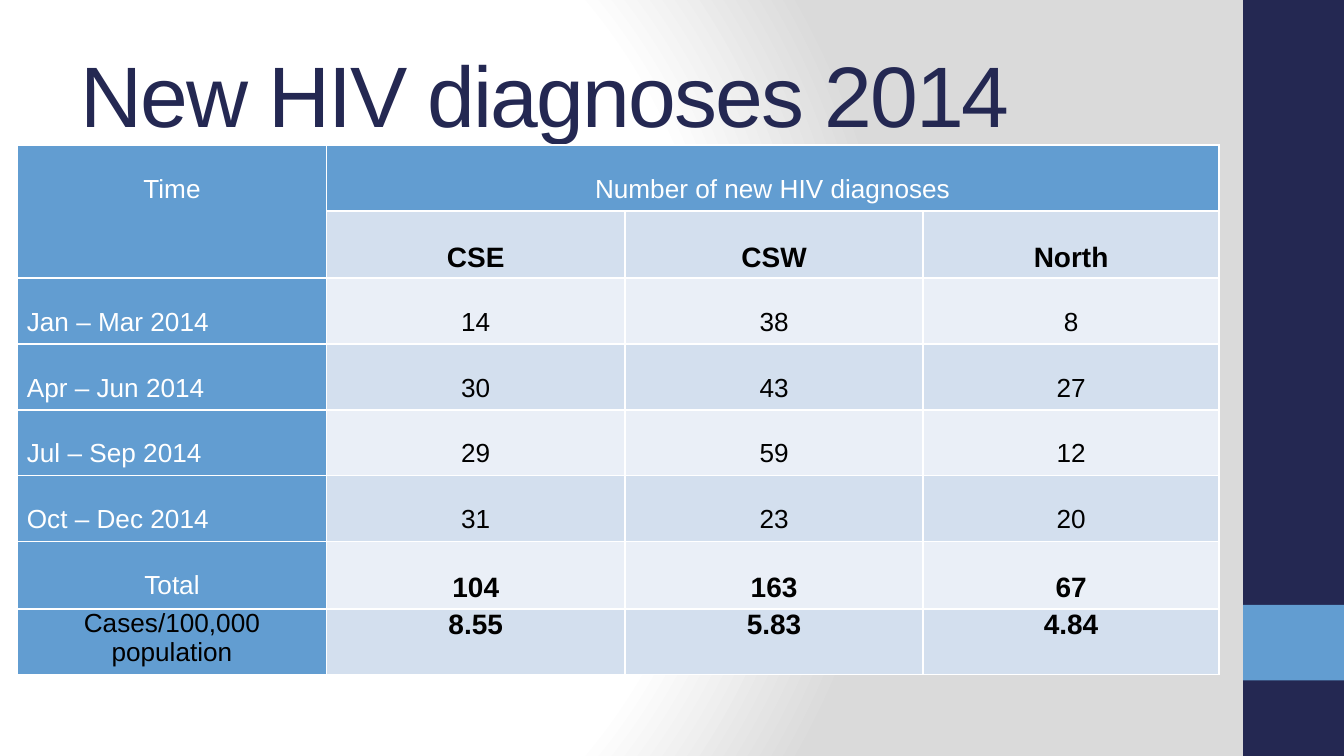
from pptx import Presentation
from pptx.dml.color import RGBColor
from pptx.enum.shapes import MSO_SHAPE as SHAPE
from pptx.enum.text import MSO_ANCHOR as ANCHOR, PP_ALIGN as ALIGN
from pptx.oxml import parse_xml
from pptx.oxml.ns import nsdecls, qn
from pptx.util import Inches, Pt

COLORS = {"navy": "242852", "blue": "629DD1", "white": "FFFFFF", "black": "000000",
          "grey": "DADADA", "dark_band": "D3DFEE", "light_band": "EAEFF7"}
W = 10
H = W * 9 / 16


def rgb(name):
    return RGBColor.from_string(COLORS[name])


def write(p, text, size, color, bold=False):
    r = p.add_run()
    r.text = text
    for key, value in {"name": "Arial", "size": Pt(size), "bold": bold}.items():
        setattr(r.font, key, value)
    r.font.color.rgb = rgb(color)
    return r


prs = Presentation()
prs.slide_width, prs.slide_height = Inches(W), Inches(H)
s = prs.slides.add_slide(prs.slide_layouts[6])

# Background: radial gradient from white to grey
s.background.fill.gradient()
grad = s.element.find(".//" + qn("a:gradFill"))
stops = "".join(f'<a:gs pos="{pos * 1000}"><a:srgbClr val="{COLORS[c]}"/></a:gs>'
                for pos, c in ((0, "white"), (75, "white"), (100, "grey")))
grad.getparent().replace(grad, parse_xml(
    f'<a:gradFill {nsdecls("a")} rotWithShape="1"><a:gsLst>{stops}</a:gsLst>'
    '<a:path path="circle"><a:fillToRect l="20000" t="50000" r="100000" b="50000"/>'
    '</a:path></a:gradFill>'))

# Side bar with its accent block
bar_x = 0.925 * W
for top, height, color in ((0, H, "navy"), (0.8 * H, 0.1 * H, "blue")):
    sp = s.shapes.add_shape(SHAPE.RECTANGLE, Inches(bar_x), Inches(top),
                            Inches(W - bar_x), Inches(height))
    sp.shadow.inherit = False
    sp.fill.solid()
    sp.fill.fore_color.rgb = rgb(color)
    sp.line.fill.background()

# Title
tf = s.shapes.add_textbox(Inches(0.5), Inches(0.23), Inches(8.33), Inches(0.93)).text_frame
tf.word_wrap = True
tf.vertical_anchor = ANCHOR.MIDDLE
r = write(tf.paragraphs[0], "New HIV diagnoses 2014", 46, "navy")
r.font._element.set("spc", "-100")

# Table
rows = [
    ["Time", "Number of new HIV diagnoses", "", ""],
    ["", "CSE", "CSW", "North"],
    ["Jan – Mar 2014", "14", "38", "8"],
    ["Apr – Jun 2014", "30", "43", "27"],
    ["Jul – Sep 2014", "29", "59", "12"],
    ["Oct – Dec 2014", "31", "23", "20"],
    ["Total", "104", "163", "67"],
    ["Cases/100,000\npopulation", "8.55", "5.83", "4.84"],
]
col_widths = [2.3, 2.22, 2.22, 2.2]
last = len(rows) - 1
bold_rows = (1, last - 1, last)
row_heights = [0.5 if i in (1, last - 1) else 0.49 for i in range(len(rows))]

frame = s.shapes.add_table(len(rows), len(col_widths), Inches(0.13), Inches(1.08),
                           Inches(sum(col_widths)), Inches(sum(row_heights)))
table = frame.table
table.first_row = table.horz_banding = False
for col, width in zip(table.columns, col_widths):
    col.width = Inches(width)
table.cell(0, 0).merge(table.cell(1, 0))
table.cell(0, 1).merge(table.cell(0, 3))

margins = {"margin_left": Inches(0.07), "margin_right": Inches(0.07),
           "margin_top": 0, "margin_bottom": 0}
for i, row in enumerate(rows):
    table.rows[i].height = Inches(row_heights[i])
    for j, text in enumerate(row):
        cell = table.cell(i, j)
        for key, value in margins.items():
            setattr(cell, key, value)
        header = i == 0 or j == 0
        cell.fill.solid()
        cell.fill.fore_color.rgb = rgb(
            "blue" if header else "dark_band" if i % 2 else "light_band")

        # White one-point borders, placed ahead of the fill
        tc_pr = cell._tc.get_or_add_tcPr()
        for n, side in enumerate(("lnL", "lnR", "lnT", "lnB")):
            tc_pr.insert(n, parse_xml(
                f'<a:{side} {nsdecls("a")} w="{Pt(1)}"><a:solidFill>'
                f'<a:srgbClr val="{COLORS["white"]}"/></a:solidFill></a:{side}>'))

        # Cell text
        if not text:
            continue
        bold = i in bold_rows and not header
        color = "white" if header and i < last else "black"
        for n, line in enumerate(text.split("\n")):
            p = cell.text_frame.add_paragraph() if n else cell.text_frame.paragraphs[0]
            p.alignment = ALIGN.JUSTIFY if j == 0 and 2 <= i <= 5 else ALIGN.CENTER
            p.line_spacing = 1.0 if i == last else 2.0
            write(p, line, 15 if bold else 14, color, bold)

prs.save("out.pptx")
